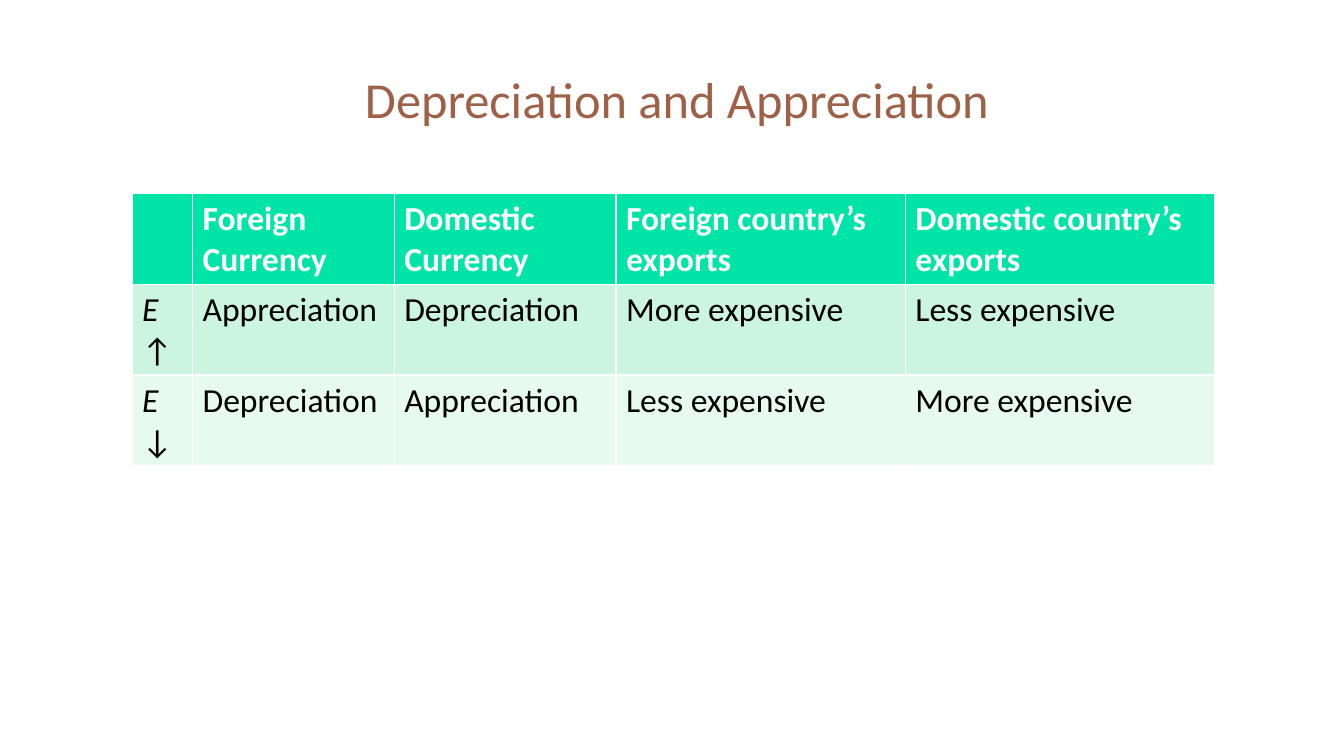
"""Build a slide with a table of currency depreciation and appreciation."""
import pptx
import pptx.util
import pptx.dml.color
import pptx.enum.text

PX = 9144
THEME = {
    "font": "Calibri", "title": 36, "body": 24,
    "brown": "9E6147", "white": "FFFFFF", "black": "000000",
    "fills": ["00E4A8", "CCF5E1", "E7FAF1"],
}
COLS = [60, 200, 220, 287, 307]
ROWS = [
    ["", "Foreign Currency", "Domestic Currency",
     "Foreign country’s exports", "Domestic country’s exports"],
    ["E↑", "Appreciation", "Depreciation", "More expensive", "Less expensive"],
    ["E↓", "Depreciation", "Appreciation", "Less expensive", "More expensive"],
]
HIGH = 41


def color(code):
    return pptx.dml.color.RGBColor.from_string(code)


def style(para, size, code, bold=False):
    para.font.name = THEME["font"]
    para.font.size = pptx.util.Pt(size)
    para.font.color.rgb = color(code)
    para.font.bold = bold


deck = pptx.Presentation()
deck.slide_width = 1333 * PX
deck.slide_height = 750 * PX
slide = deck.slides.add_slide(deck.slide_layouts[6])

title = slide.shapes.add_textbox(61 * PX, 35 * PX, 1221 * PX, 125 * PX)
frame = title.text_frame
frame.word_wrap = True
frame.vertical_anchor = pptx.enum.text.MSO_ANCHOR.MIDDLE
para = frame.paragraphs[0]
para.text = "Depreciation and Appreciation"
para.alignment = pptx.enum.text.PP_ALIGN.CENTER
style(para, THEME["title"], THEME["brown"])

table = slide.shapes.add_table(
    len(ROWS), len(COLS), 131 * PX, 192 * PX, sum(COLS) * PX, HIGH * len(ROWS) * PX
).table
for col, width in zip(table.columns, COLS):
    col.width = width * PX

for r, (row, fill) in enumerate(zip(ROWS, THEME["fills"])):
    head = r == 0
    for c, text in enumerate(row):
        cell = table.cell(r, c)
        cell.fill.solid()
        cell.fill.fore_color.rgb = color(fill)
        para = cell.text_frame.paragraphs[0]
        style(para, THEME["body"], THEME["white" if head else "black"], head)
        for part in text if c == 0 else [text]:
            run = para.add_run()
            run.text = part
            if part == "E":
                run.font.italic = True

deck.save("out.pptx")
